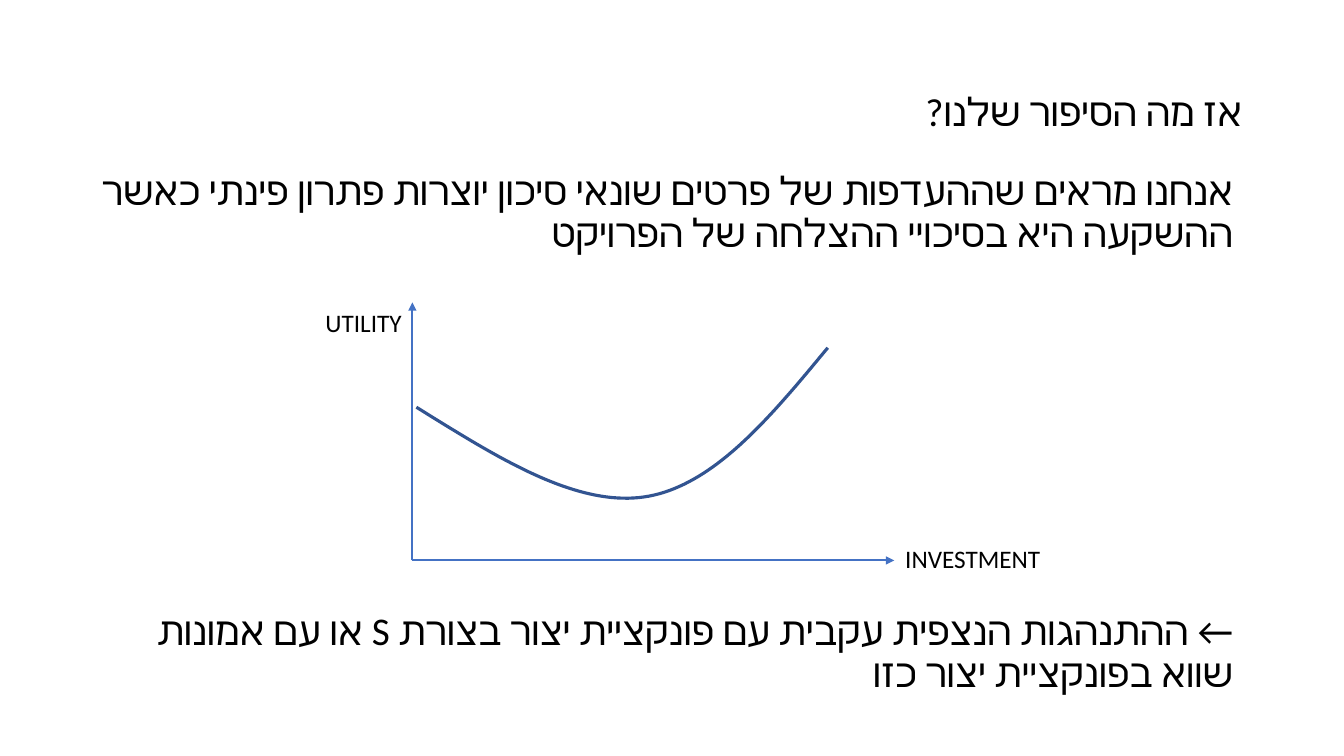
from pptx import Presentation
from pptx.dml.color import RGBColor
from pptx.enum.shapes import MSO_CONNECTOR as Connector
from pptx.enum.text import MSO_ANCHOR as Anchor, PP_ALIGN as Align
from pptx.oxml.ns import qn
from pptx.util import Inches, Pt
from lxml.etree import SubElement

# Content
COLORS = {"text": "000000", "axis": "4472C4", "curve": "325491"}
FONT = "Calibri"

# text, (left, top, width, height), size, right-to-left, anchor
TEXTS = [
    ("אז מה הסיפור שלנו?", (0.92, 0.4, 11.5, 1.45), 28, True, Anchor.MIDDLE),
    ("אנחנו מראים שההעדפות של פרטים שונאי סיכון יוצרות פתרון פינתי כאשר ההשקעה היא בסיכויי ההצלחה של הפרויקט",
     (0.83, 1.65, 11.5, 1), 28, True, Anchor.TOP),
    ("← ההתנהגות הנצפית עקבית עם פונקציית יצור בצורת S או עם אמונות שווא בפונקציית יצור כזו",
     (0.83, 6.02, 11.5, 1), 28, True, Anchor.TOP),
    ("UTILITY", (3.13, 3, 1.6, 0.4), 18, False, Anchor.TOP),
    ("INVESTMENT", (8.88, 5.34, 1.6, 0.4), 18, False, Anchor.TOP),
]
ORIGIN = (4.09, 5.56)
AXIS_ENDS = [(8.87, 5.56), (4.09, 3)]

# Two Bezier arcs that share their middle point
UTILITY_CURVE = [
    [(4.13, 4.04), (4.92, 4.53), (5.7, 5.03), (6.39, 4.93)],
    [(6.39, 4.93), (7.07, 4.83), (7.64, 4.14), (8.21, 3.45)],
]
STEPS = 40


def bezier(arc, t):
    weights = ((1 - t) ** 3, 3 * t * (1 - t) ** 2, 3 * t ** 2 * (1 - t), t ** 3)
    return tuple(Inches(sum(w * p[axis] for w, p in zip(weights, arc))) for axis in (0, 1))


def set_line(line, color, width):
    line.color.rgb = RGBColor.from_string(COLORS[color])
    line.width = Pt(width)


prs = Presentation()
prs.slide_width, prs.slide_height = Inches(13.33), Inches(7.5)
slide = prs.slides.add_slide(prs.slide_layouts[6])
shapes = slide.shapes

# Axes
for end in AXIS_ENDS:
    axis = shapes.add_connector(Connector.STRAIGHT, *map(Inches, ORIGIN + end))
    set_line(axis.line, "axis", 1.5)
    SubElement(axis.line._get_or_add_ln(), qn("a:tailEnd"), type="triangle")
    SubElement(axis._element.spPr, qn("a:effectLst"))

# Utility curve
points = [bezier(arc, step / STEPS) for arc in UTILITY_CURVE for step in range(STEPS + 1)]
builder = shapes.build_freeform(*points[0])
builder.add_line_segments(points[1:], close=False)
curve = builder.convert_to_shape()
curve.shadow.inherit = False
curve.fill.background()
set_line(curve.line, "curve", 2.25)

# Statements and axis labels
for text, place, size, rtl, anchor in TEXTS:
    frame = shapes.add_textbox(*map(Inches, place)).text_frame
    frame.word_wrap = True
    frame.vertical_anchor = anchor
    paragraph = frame.paragraphs[0]
    if rtl:
        paragraph.alignment = Align.RIGHT
        paragraph.line_spacing = 0.9
        paragraph._p.get_or_add_pPr().set("rtl", "1")
    run = paragraph.add_run()
    run.text = text
    for name, value in {"name": FONT, "size": Pt(size)}.items():
        setattr(run.font, name, value)
    run.font.color.rgb = RGBColor.from_string(COLORS["text"])
    SubElement(run._r.get_or_add_rPr(), qn("a:cs"), typeface=FONT)

prs.save("out.pptx")
